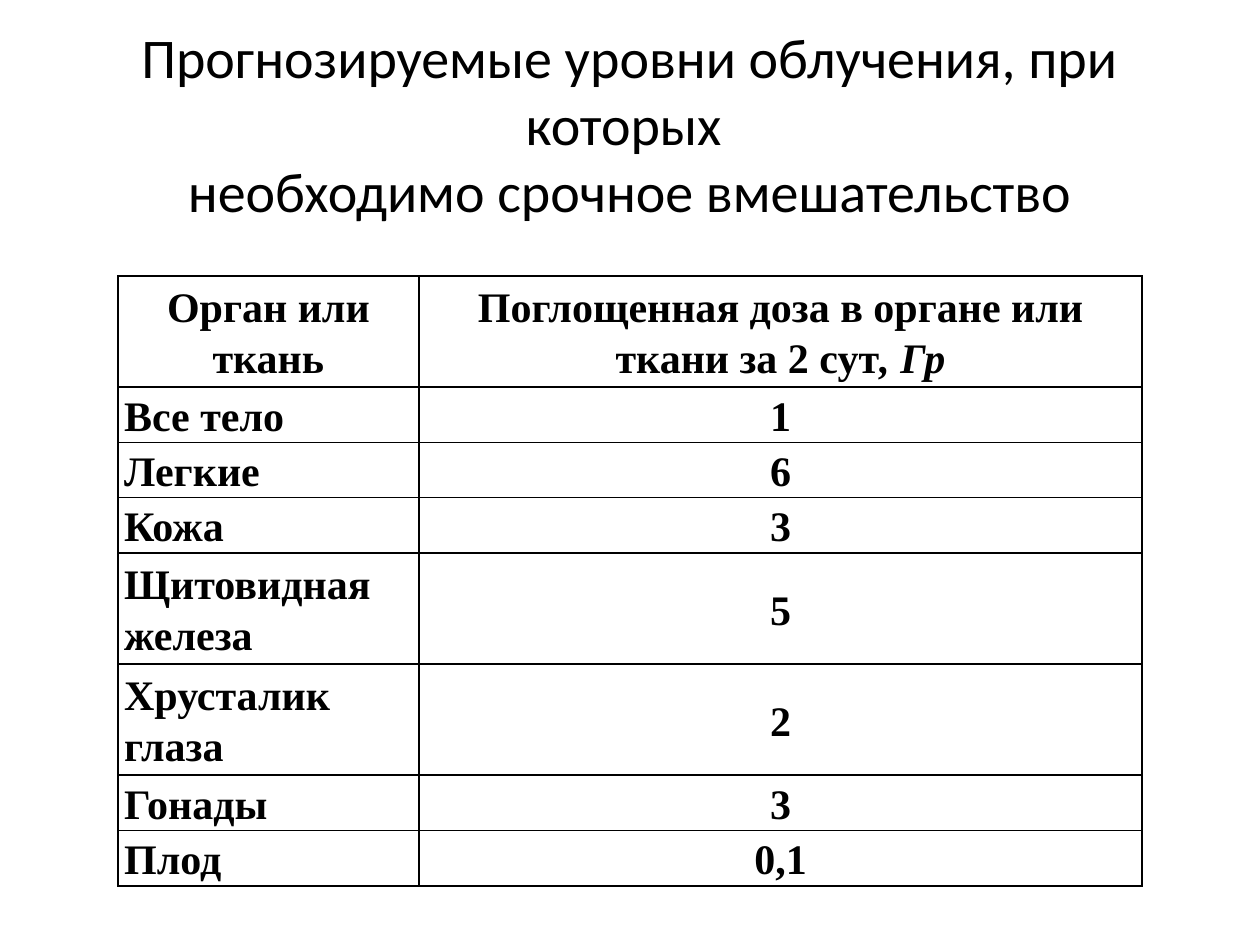
from lxml import etree
from pptx import Presentation
from pptx import util as u
from pptx.dml.color import RGBColor
from pptx.enum import text
from pptx.oxml import ns

WIDTH, HEIGHT = 10, 7.5
BLACK = "000000"
TITLE = ["Прогнозируемые уровни облучения, при которых ", "необходимо срочное вмешательство"]
HEADINGS = [["Орган или ткань"], ["Поглощенная доза в органе или ткани за 2 сут", ", Гр"]]
DOSES = [
    ("Все тело", "1"),
    ("Легкие", "6"),
    ("Кожа", "3"),
    ("Щитовидная железа", "5"),
    ("Хрусталик глаза", "2"),
    ("Гонады", "3"),
    ("Плод", "0,1"),
]
COLUMN_WIDTHS = (2.39, 5.74)
MINIMUM_ROW_HEIGHT = 0


def paint(target, color):
    target.rgb = RGBColor.from_string(color)


def add_run(paragraph, words, font, size, bold=False, italic=False):
    run = paragraph.add_run()
    run.text = words
    run.font.name = font
    run.font.size = u.Pt(size)
    run.font.bold = bold
    run.font.italic = italic
    paint(run.font.color, BLACK)


def add_title(slide):
    margin = WIDTH * 0.05
    title = slide.shapes.add_textbox(
        u.Inches(margin), u.Inches(HEIGHT * 0.04), u.Inches(WIDTH - 2 * margin), u.Inches(1.89)
    )
    frame = title.text_frame
    frame.word_wrap = True
    frame.vertical_anchor = text.MSO_ANCHOR.MIDDLE
    frame.margin_top = 0
    frame.margin_bottom = u.Inches(0.54)
    heading = frame.paragraphs[0]
    heading.alignment = text.PP_ALIGN.CENTER
    add_run(heading, TITLE[0], "Calibri", 32)
    heading.add_line_break()
    add_run(heading, TITLE[1], "Calibri", 32)


def add_borders(cell, color, points):
    properties = cell._tc.get_or_add_tcPr()
    for side in ("a:lnL", "a:lnR", "a:lnT", "a:lnB"):
        border = etree.SubElement(properties, ns.qn(side), w=str(u.Pt(points)))
        fill = etree.SubElement(border, ns.qn("a:solidFill"))
        etree.SubElement(fill, ns.qn("a:srgbClr"), val=color)


def fill_cell(cell, parts, centered):
    add_borders(cell, BLACK, 1)
    cell.fill.background()
    cell.vertical_anchor = text.MSO_ANCHOR.MIDDLE
    cell.margin_left = cell.margin_right = u.Inches(0.05)
    cell.margin_top = cell.margin_bottom = 0
    paragraph = cell.text_frame.paragraphs[0]
    paragraph.alignment = text.PP_ALIGN.CENTER if centered else text.PP_ALIGN.LEFT
    paragraph.line_spacing = 1.1
    for index, words in enumerate(parts):
        add_run(paragraph, words, "Times New Roman", 24, bold=True, italic=index > 0)


def add_dose_table(slide):
    rows = [HEADINGS] + [[[organ], [dose]] for organ, dose in DOSES]
    width = sum(COLUMN_WIDTHS)
    table = slide.shapes.add_table(
        len(rows), len(COLUMN_WIDTHS),
        u.Inches((WIDTH - width) / 2), u.Inches(2.19), u.Inches(width), u.Inches(4.84),
    ).table
    table.first_row = table.horz_banding = False
    for column, column_width in zip(table.columns, COLUMN_WIDTHS):
        column.width = u.Inches(column_width)
    for r, row in enumerate(rows):
        table.rows[r].height = u.Inches(MINIMUM_ROW_HEIGHT)
        for c, parts in enumerate(row):
            fill_cell(table.cell(r, c), parts, centered=r == 0 or c == 1)


def main():
    deck = Presentation()
    deck.slide_width, deck.slide_height = u.Inches(WIDTH), u.Inches(HEIGHT)
    slide = deck.slides.add_slide(deck.slide_layouts[6])
    add_title(slide)
    add_dose_table(slide)
    deck.save("out.pptx")


if __name__ == "__main__":
    main()
